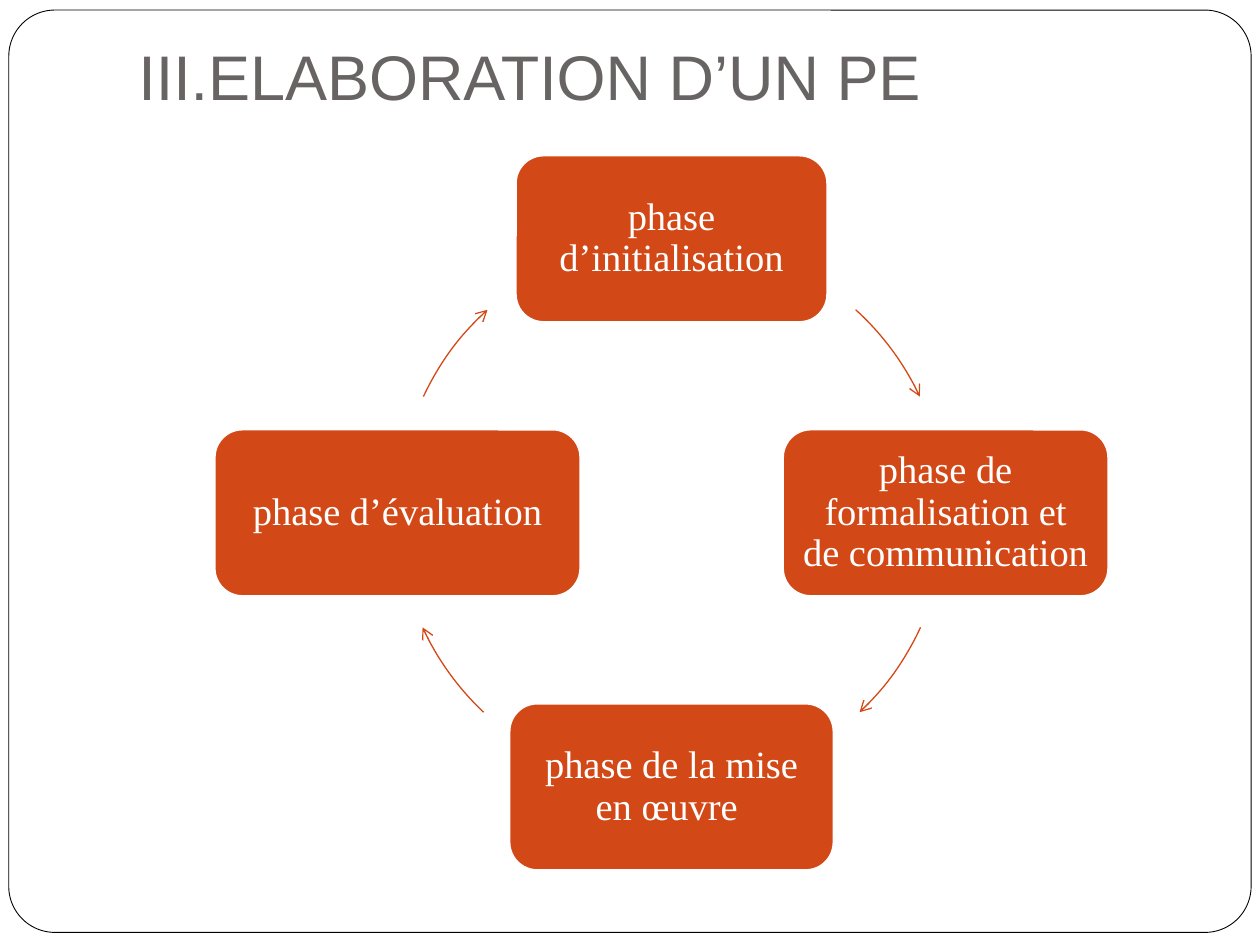
import math

import pptx
import pptx.dml.color
import pptx.enum.shapes
import pptx.enum.text
import pptx.oxml
import pptx.oxml.ns
import pptx.util

RGB = pptx.dml.color.RGBColor
WHITE = RGB(0xFF, 0xFF, 0xFF)
BLACK = RGB(0x00, 0x00, 0x00)
ORANGE = RGB(0xD3, 0x48, 0x17)
GREY = RGB(0x69, 0x64, 0x64)
SHAPE = pptx.enum.shapes.MSO_SHAPE
ANCHOR = pptx.enum.text.MSO_ANCHOR
ALIGN = pptx.enum.text.PP_ALIGN
COLS, ROWS = 100, 75
CENTER_X, CENTER_Y, RADIUS = 53.3, 40.7, 21.75
BOX_HEIGHT = 13.2

PHASES = [
    ("phase d’initialisation", 24.7),
    ("phase de formalisation et de communication", 25.8),
    ("phase de la mise en œuvre ", 25.7),
    ("phase d’évaluation", 29),
]
ARCS = [(312.2, 334.9), (24.7, 46.7), (133.3, 155.3), (205.1, 227.8)]


class CycleSlide:
    """Draws a cycle on one slide, with lengths in grid columns and rows."""

    def __init__(self, prs):
        self.s = prs.slides.add_slide(prs.slide_layouts[6])
        self.col = prs.slide_width / COLS
        self.row = prs.slide_height / ROWS

    def place(self, x, y, w, h):
        return (round(x * self.col), round(y * self.row),
                round(w * self.col), round(h * self.row))

    def shape(self, kind, box, fill, line, width):
        sp = self.s.shapes.add_shape(kind, *self.place(*box))
        sp.shadow.inherit = False
        if fill is None:
            sp.fill.background()
        else:
            sp.fill.solid()
            sp.fill.fore_color.rgb = fill
        sp.line.color.rgb = line
        sp.line.width = pptx.util.Pt(width)
        return sp

    def set_text(self, sp, text, font, size, color, anchor, align):
        tf = sp.text_frame
        tf.word_wrap = True
        tf.vertical_anchor = anchor
        p = tf.paragraphs[0]
        p.text = text
        p.alignment = align
        p.font.name = font
        p.font.size = pptx.util.Pt(size)
        p.font.color.rgb = color
        return tf

    def frame(self):
        sp = self.shape(SHAPE.ROUNDED_RECTANGLE, (0.7, 0.8, 98.6, 73.2), WHITE, BLACK, 0.5)
        sp.adjustments[0] = 0.05

    def title(self, text):
        sp = self.s.shapes.add_textbox(*self.place(10, 3, 85, 12.5))
        tf = self.set_text(sp, text, "Arial", 36, GREY, ANCHOR.TOP, ALIGN.LEFT)
        tf.margin_top = 0

    def phase(self, text, width, angle):
        x = CENTER_X + RADIUS * math.cos(math.radians(angle))
        y = CENTER_Y + RADIUS * math.sin(math.radians(angle))
        box = (x - width / 2, y - BOX_HEIGHT / 2, width, BOX_HEIGHT)
        sp = self.shape(SHAPE.ROUNDED_RECTANGLE, box, ORANGE, WHITE, 1)
        tf = self.set_text(sp, text, "Times New Roman", 22, WHITE, ANCHOR.MIDDLE, ALIGN.CENTER)
        tf.margin_left = tf.margin_right = pptx.util.Inches(0.09)
        tf.margin_top = tf.margin_bottom = pptx.util.Inches(0.09)
        tf.paragraphs[0].line_spacing = 0.9

    def arc(self, start, end):
        box = (CENTER_X - RADIUS, CENTER_Y - RADIUS, 2 * RADIUS, 2 * RADIUS)
        sp = self.shape(SHAPE.ARC, box, None, ORANGE, 0.75)
        for i, angle in enumerate((start, end)):
            sp.adjustments[i] = angle * 0.6
        ln = sp.element.spPr.find(pptx.oxml.ns.qn("a:ln"))
        tail = pptx.oxml.parse_xml(
            f'<a:tailEnd {pptx.oxml.ns.nsdecls("a")} type="arrow"/>')
        ln.append(tail)


def main():
    prs = pptx.Presentation()
    prs.slide_width = pptx.util.Inches(10)
    prs.slide_height = pptx.util.Inches(7.5)
    slide = CycleSlide(prs)
    slide.frame()
    slide.title("III.ELABORATION D’UN PE")
    for i, ((text, width), arc) in enumerate(zip(PHASES, ARCS)):
        slide.phase(text, width, 90 * i - 90)
        slide.arc(*arc)
    prs.save("out.pptx")


if __name__ == "__main__":
    main()
